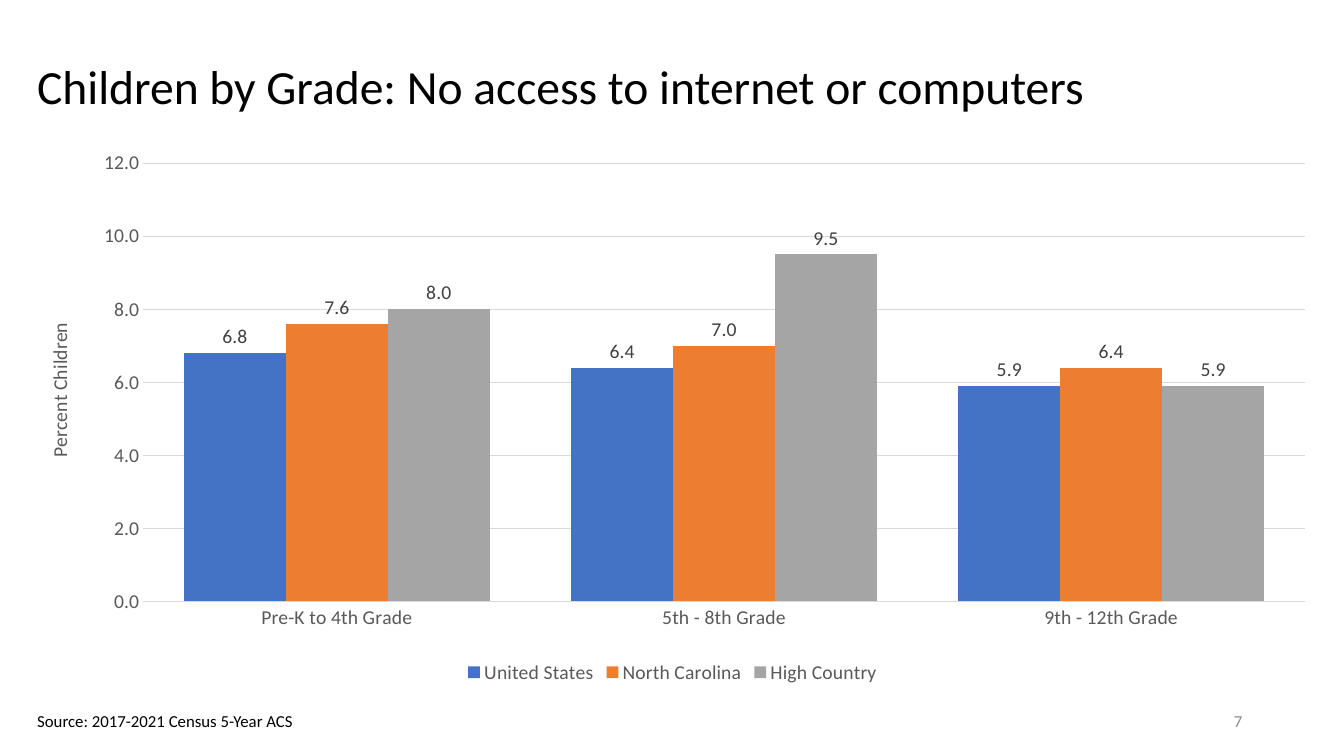
from lxml.etree import SubElement
from pptx import Presentation
from pptx.chart.data import CategoryChartData
from pptx.dml.color import RGBColor
from pptx.enum.chart import XL_CHART_TYPE as ChartType
from pptx.enum.chart import XL_LABEL_POSITION as LabelPosition
from pptx.enum.chart import XL_LEGEND_POSITION as LegendPosition
from pptx.enum.chart import XL_TICK_MARK as TickMark
from pptx.enum.text import MSO_ANCHOR as Anchor
from pptx.enum.text import PP_ALIGN as Align
from pptx.oxml.ns import qn
from pptx.util import Inches, Pt

COLORS = {
    "black": "000000",
    "page_number": "8C8C8C",
    "axis": "595959",
    "label": "404040",
    "grid": "D9D9D9",
    "blue": "4472C4",
    "orange": "ED7D31",
    "gray": "A5A5A5",
}
GRADES = ["Pre-K to 4th Grade", "5th - 8th Grade", "9th - 12th Grade"]
REGIONS = [
    ("United States", (6.8, 6.4, 5.9), "blue"),
    ("North Carolina", (7.6, 7.0, 6.4), "orange"),
    ("High Country", (8.0, 9.5, 5.9), "gray"),
]
NUMBER_FORMAT = "#,##0.0"


class SlideBuilder:
    def __init__(self, page, font="Calibri"):
        self.page = page
        self.font = font

    def color(self, name):
        return RGBColor.from_string(COLORS[name])

    def style_font(self, font, size, color):
        font.name = self.font
        font.size = Pt(size)
        font.bold = False
        font.color.rgb = self.color(color)

    def style_line(self, line):
        line.color.rgb = self.color("grid")
        line.width = Pt(0.75)

    def text(self, text, at, size, color, anchor=Anchor.TOP,
             align=Align.LEFT, wrap=True, spacing=1.0):
        box = self.page.shapes.add_textbox(*map(Inches, at))
        frame = box.text_frame
        frame.word_wrap = wrap
        frame.vertical_anchor = anchor
        para = frame.paragraphs[0]
        para.alignment = align
        para.line_spacing = spacing
        span = para.add_run()
        span.text = text
        self.style_font(span.font, size, color)

    def column_chart(self, at, categories, series, axis_title, plot_area):
        data = CategoryChartData(number_format=NUMBER_FORMAT)
        data.categories = categories
        for name, values, _ in series:
            data.add_series(name, values)
        frame = self.page.shapes.add_chart(
            ChartType.COLUMN_CLUSTERED, *map(Inches, at), data)
        chart = frame.chart
        self.style_font(chart.font, 14, "black")
        chart.has_title = False
        chart.has_legend = True
        chart.legend.position = LegendPosition.BOTTOM
        chart.legend.include_in_layout = False
        self.style_font(chart.legend.font, 14, "axis")

        plot = chart.plots[0]
        plot.gap_width = 80
        plot.overlap = 0
        plot.vary_by_categories = False
        for bars, (_, _, color) in zip(plot.series, series):
            bars.format.fill.solid()
            bars.format.fill.fore_color.rgb = self.color(color)
            bars.invert_if_negative = False
            labels = bars.data_labels
            labels.show_value = True
            labels.position = LabelPosition.OUTSIDE_END
            labels.number_format = NUMBER_FORMAT
            labels.number_format_is_linked = False
            self.style_font(labels.font, 14, "label")

        self.style_axes(chart, axis_title)
        self.place_plot(chart, plot_area)

    def style_axes(self, chart, title):
        grades, percent = chart.category_axis, chart.value_axis
        for axis in (grades, percent):
            axis.major_tick_mark = axis.minor_tick_mark = TickMark.NONE
            self.style_font(axis.tick_labels.font, 14, "axis")
        self.style_line(grades.format.line)
        percent.minimum_scale, percent.maximum_scale = 0, 12
        percent.major_unit = 2
        percent.format.line.fill.background()
        self.style_line(percent.major_gridlines.format.line)
        percent.tick_labels.number_format = NUMBER_FORMAT
        percent.tick_labels.number_format_is_linked = False
        frame = percent.axis_title.text_frame
        span = frame.paragraphs[0].add_run()
        span.text = title
        self.style_font(span.font, 14, "axis")
        body = frame._txBody.find(qn("a:bodyPr"))
        body.set("rot", "-5400000")
        body.set("vert", "horz")

    def place_plot(self, chart, area):
        """Fix the inner plot area as fractions of the chart."""
        plot_area = chart._chartSpace.chart.plotArea
        layout = plot_area.find(qn("c:layout"))
        if layout is None:
            layout = SubElement(plot_area, qn("c:layout"))
            plot_area.insert(0, layout)
        manual = SubElement(layout, qn("c:manualLayout"))
        settings = [("layoutTarget", "inner"), ("xMode", "edge"), ("yMode", "edge")]
        settings += zip("xywh", area)
        for tag, value in settings:
            SubElement(manual, qn(f"c:{tag}")).set("val", str(value))


def main():
    deck = Presentation()
    deck.slide_width, deck.slide_height = Inches(13.33), Inches(7.5)
    slide = SlideBuilder(deck.slides.add_slide(deck.slide_layouts[6]))
    slide.text("Children by Grade: No access to internet or computers",
               (0.27, 0.34, 12.76, 1.09), 34, "black",
               anchor=Anchor.MIDDLE, spacing=0.9)
    slide.column_chart((0.27, 1.43, 12.8, 5.4), GRADES, REGIONS,
                       "Percent Children", (0.09, 0.035, 0.9, 0.805))
    slide.text("7", (9.42, 6.95, 3, 0.4), 12, "page_number",
               anchor=Anchor.MIDDLE, align=Align.RIGHT)
    slide.text("Source: 2017-2021 Census 5-Year ACS",
               (0.27, 7, 2.78, 0.3), 12, "black", wrap=False)
    deck.save("out.pptx")


if __name__ == "__main__":
    main()
